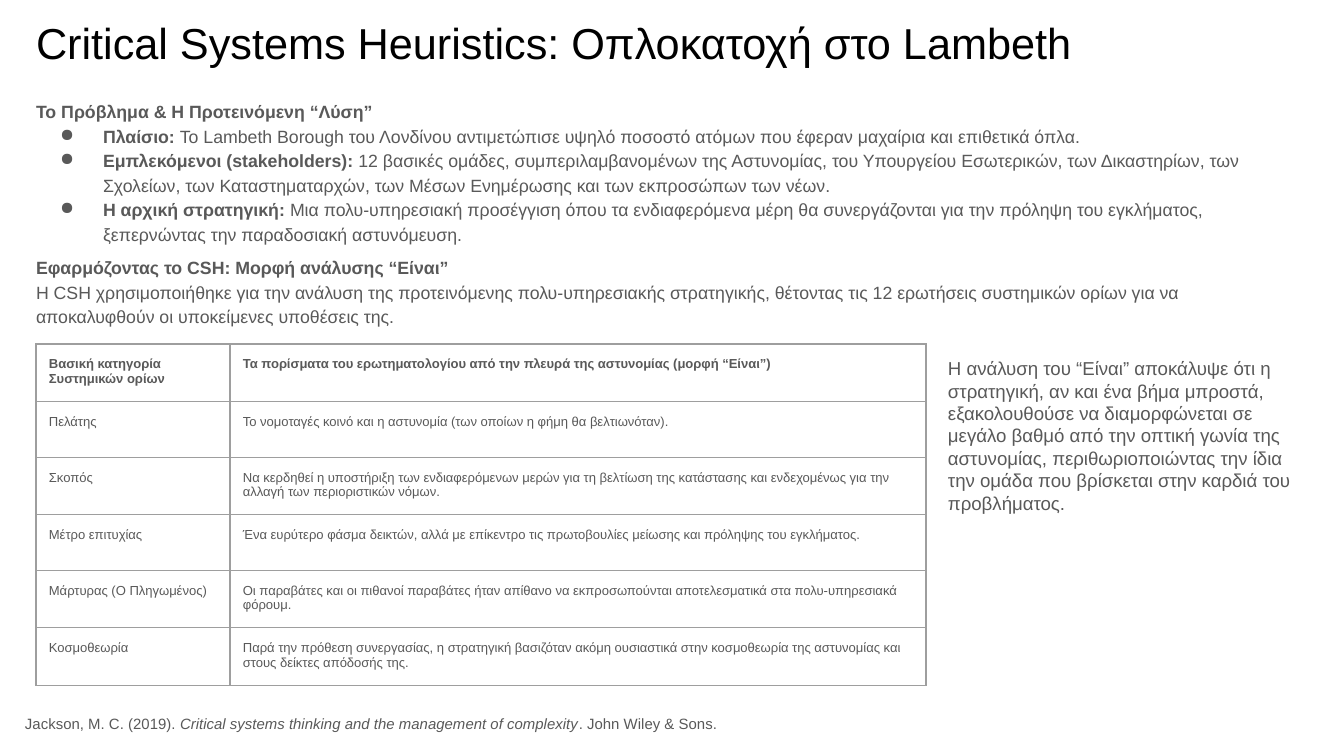
import pptx
import pptx.dml.color
import pptx.enum.text
import pptx.oxml
import pptx.oxml.ns
import pptx.util

EMU_PER_PX = 9144000 / 1344
INSET = 13
FONT = "Arial"
BLACK = "000000"
GRAY = "595959"
BORDER = "9E9E9E"

TITLE = "Critical Systems Heuristics: Οπλοκατοχή στο Lambeth"
PROBLEM_HEADING = [("Το Πρόβλημα & Η Προτεινόμενη “Λύση”", "b")]
PROBLEM_POINTS = [
    [("Πλαίσιο: ", "b"),
     ("Το Lambeth Borough του Λονδίνου αντιμετώπισε υψηλό ποσοστό ατόμων που έφεραν μαχαίρια και επιθετικά όπλα.", "")],
    [("Εμπλεκόμενοι (stakeholders):", "b"),
     (" 12 βασικές ομάδες, συμπεριλαμβανομένων της Αστυνομίας, του Υπουργείου Εσωτερικών, των Δικαστηρίων, "
      "των Σχολείων, των Καταστηματαρχών, των Μέσων Ενημέρωσης και των εκπροσώπων των νέων.", "")],
    [("Η αρχική στρατηγική: ", "b"),
     ("Μια πολυ-υπηρεσιακή προσέγγιση όπου τα ενδιαφερόμενα μέρη θα συνεργάζονται για την πρόληψη του "
      "εγκλήματος, ξεπερνώντας την παραδοσιακή αστυνόμευση.", "")],
]
APPLICATION = [
    ("Εφαρμόζοντας το CSH: Μορφή ανάλυσης “Είναι”", "b"),
    ("\n", ""),
    ("Η CSH χρησιμοποιήθηκε για την ανάλυση της προτεινόμενης πολυ-υπηρεσιακής στρατηγικής, θέτοντας τις 12 "
     "ερωτήσεις συστημικών ορίων για να αποκαλυφθούν οι υποκείμενες υποθέσεις της.", ""),
]
FINDINGS = [
    ("Βασική κατηγορία Συστημικών ορίων",
     "Τα πορίσματα του ερωτηματολογίου από την πλευρά της αστυνομίας (μορφή “Είναι”)"),
    ("Πελάτης",
     "Το νομοταγές κοινό και η αστυνομία (των οποίων η φήμη θα βελτιωνόταν)."),
    ("Σκοπός",
     "Nα κερδηθεί η υποστήριξη των ενδιαφερόμενων μερών για τη βελτίωση της κατάστασης και ενδεχομένως για "
     "την αλλαγή των περιοριστικών νόμων."),
    ("Μέτρο επιτυχίας",
     "Ένα ευρύτερο φάσμα δεικτών, αλλά με επίκεντρο τις πρωτοβουλίες μείωσης και πρόληψης του εγκλήματος."),
    ("Μάρτυρας (Ο Πληγωμένος)",
     "Οι παραβάτες και οι πιθανοί παραβάτες ήταν απίθανο να εκπροσωπούνται αποτελεσματικά στα "
     "πολυ-υπηρεσιακά φόρουμ."),
    ("Κοσμοθεωρία",
     "Παρά την πρόθεση συνεργασίας, η στρατηγική βασιζόταν ακόμη ουσιαστικά στην κοσμοθεωρία της αστυνομίας "
     "και στους δείκτες απόδοσής της."),
]
CONCLUSION = (
    "Η ανάλυση του “Είναι” αποκάλυψε ότι η στρατηγική, αν και ένα βήμα μπροστά, εξακολουθούσε να "
    "διαμορφώνεται σε μεγάλο βαθμό από την οπτική γωνία της αστυνομίας, περιθωριοποιώντας την ίδια την ομάδα "
    "που βρίσκεται στην καρδιά του προβλήματος."
)
CITATION = [
    ("Jackson, M. C. (2019). ", ""),
    ("Critical systems thinking and the management of complexity", "i"),
    (". John Wiley & Sons.", ""),
]


def px(length):
    return pptx.util.Emu(round(length * EMU_PER_PX))


def color(value):
    return pptx.dml.color.RGBColor.from_string(value)


def element(xml):
    return pptx.oxml.parse_xml(xml.replace(">", f" {pptx.oxml.ns.nsdecls('a')}>", 1))


def add_bullet(paragraph):
    properties = paragraph._p.get_or_add_pPr()
    properties.set("marL", str(px(67)))
    properties.set("indent", str(px(-43)))
    properties.append(element(f'<a:buClr><a:srgbClr val="{GRAY}"/></a:buClr>'))
    properties.append(element('<a:buChar char="●"></a:buChar>'))


def write(paragraph, runs, size, ink=GRAY, bullet=False, spacing=None, before=0):
    if bullet:
        add_bullet(paragraph)
    if spacing:
        paragraph.line_spacing = spacing
    if before:
        paragraph.space_before = pptx.util.Pt(before)
    for words, style in runs:
        if words == "\n":
            paragraph.add_line_break()
            continue
        run = paragraph.add_run()
        run.text = words
        run.font.name = FONT
        run.font.size = pptx.util.Pt(size)
        run.font.color.rgb = color(ink)
        run.font.bold = "b" in style
        run.font.italic = "i" in style


def set_insets(holder):
    holder.margin_left = holder.margin_right = px(INSET)
    holder.margin_top = holder.margin_bottom = px(INSET)


def text_frame(slide, box, anchor=pptx.enum.text.MSO_ANCHOR.TOP):
    frame = slide.shapes.add_textbox(*map(px, box)).text_frame
    frame.word_wrap = True
    frame.vertical_anchor = anchor
    set_insets(frame)
    return frame


def add_title(slide, box):
    frame = text_frame(slide, box, pptx.enum.text.MSO_ANCHOR.MIDDLE)
    write(frame.paragraphs[0], [(TITLE, "")], size=23.2, ink=BLACK)


def add_analysis(slide, box):
    frame = text_frame(slide, box)
    write(frame.paragraphs[0], PROBLEM_HEADING, size=9.5, spacing=1.15)
    for point in PROBLEM_POINTS:
        write(frame.add_paragraph(), point, size=9.5, spacing=1.15, bullet=True)
    write(frame.add_paragraph(), APPLICATION, size=9.5, spacing=1.15, before=5)


def outline_cell(cell):
    cell.fill.background()
    properties = cell._tc.get_or_add_tcPr()
    for position, side in enumerate("LRTB"):
        properties.insert(position, element(
            f'<a:ln{side} w="9525"><a:solidFill><a:srgbClr val="{BORDER}"/></a:solidFill></a:ln{side}>'))


def add_findings(slide, box):
    left, top, width, height = box
    category_width = 194
    table = slide.shapes.add_table(len(FINDINGS), 2, *map(px, box)).table
    table.first_row = table.horz_banding = False
    table.columns[0].width = px(category_width)
    table.columns[1].width = px(width - category_width)
    for row, findings in enumerate(FINDINGS):
        table.rows[row].height = px(height // len(FINDINGS))
        for column, finding in enumerate(findings):
            cell = table.cell(row, column)
            set_insets(cell)
            outline_cell(cell)
            write(cell.text_frame.paragraphs[0], [(finding, "b" if row == 0 else "")], size=7)


def add_conclusion(slide, box):
    write(text_frame(slide, box).paragraphs[0], [(CONCLUSION, "")], size=10)


def add_citation(slide, box):
    frame = text_frame(slide, box)
    frame.auto_size = pptx.enum.text.MSO_AUTO_SIZE.SHAPE_TO_FIT_TEXT
    write(frame.paragraphs[0], CITATION, size=8)


def main():
    deck = pptx.Presentation()
    deck.slide_width = px(1344)
    deck.slide_height = px(756)
    slide = deck.slides.add_slide(deck.slide_layouts[6])
    add_title(slide, (23, 0, 1292, 85))
    add_analysis(slide, (23, 85, 1292, 644))
    add_findings(slide, (36, 344, 890, 336))
    add_citation(slide, (12, 706, 1177, 46))
    add_conclusion(slide, (935, 344, 388, 235))
    deck.save("out.pptx")


if __name__ == "__main__":
    main()
